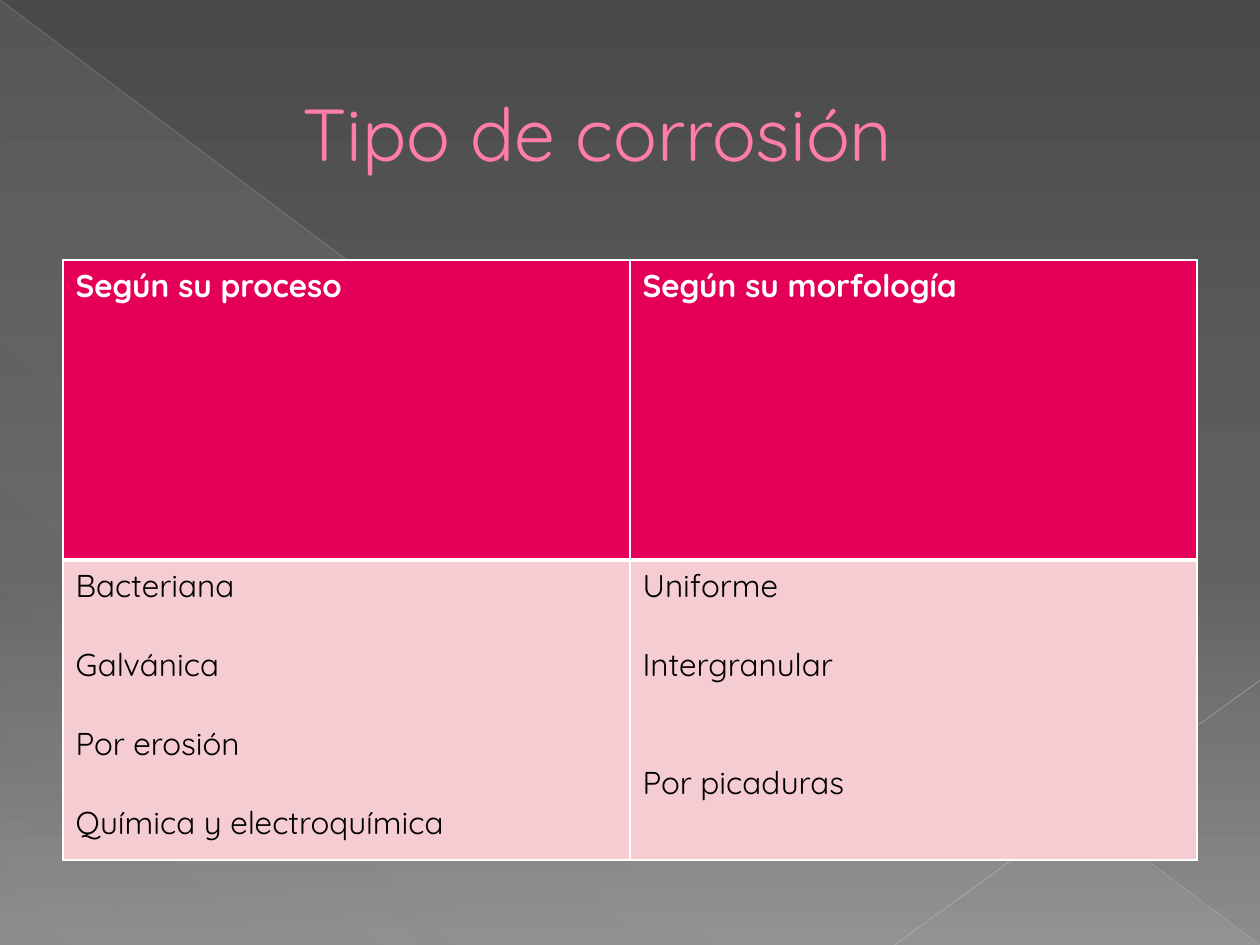
from pptx import Presentation
from pptx.dml.color import RGBColor
from pptx.enum.shapes import MSO_CONNECTOR as Connector, MSO_SHAPE as Shape
from pptx.enum.text import MSO_ANCHOR as Anchor, PP_ALIGN as Align
from pptx.oxml import parse_xml
from pptx.oxml.ns import nsdecls, qn
from pptx.util import Inches, Pt

WHITE = RGBColor(0xFF, 0xFF, 0xFF)
BLACK = RGBColor(0x00, 0x00, 0x00)
PINK = RGBColor(0xFF, 0x7D, 0xA7)
PLUM = RGBColor(0xB1, 0x27, 0x61)
CRIMSON = RGBColor(0xE4, 0x00, 0x59)
BLUSH = RGBColor(0xF5, 0xCC, 0xD1)
CHARCOAL = RGBColor(0x4A, 0x4A, 0x4A)
SLATE = RGBColor(0x62, 0x62, 0x62)
ASH = RGBColor(0x8C, 0x8C, 0x8C)
MIST = RGBColor(0xD2, 0xD2, 0xD2)
SILVER = RGBColor(0xBF, 0xBF, 0xBF)
PEARL = RGBColor(0xC6, 0xC6, 0xC6)

FONT = "Quicksand"
TITLE_FORMAT = {"name": FONT, "size": Pt(42), "bold": False}
HEADER_FORMAT = {"name": FONT, "size": Pt(18), "bold": True}
BODY_FORMAT = {"name": FONT, "size": Pt(18), "bold": False}
BLANK_LINE = 22.5

COLUMNS = [
    ("Según su proceso",
     [("Bacteriana", 0), ("Galvánica", 1), ("Por erosión", 1),
      ("Química y electroquímica", 1)]),
    ("Según su morfología",
     [("Uniforme", 0), ("Intergranular", 1), ("Por picaduras", 2)]),
]


def color_xml(color, opacity=100):
    return (f'<a:srgbClr val="{color}"><a:alpha val="{opacity * 1000}"/>'
            '</a:srgbClr>')


def line_xml(tag, color, points):
    return parse_xml(
        f'<a:{tag} {nsdecls("a")} w="{Pt(points)}"><a:solidFill>'
        f'{color_xml(color)}</a:solidFill></a:{tag}>')


class CorrosionSlide:
    def __init__(self, deck):
        self.width, self.height = deck.slide_width, deck.slide_height
        self.slide = deck.slides.add_slide(deck.slide_layouts[5])

    def point(self, x, y):
        return round(x * self.width), round(y * self.height)

    def box(self, left, top, width, height):
        return *self.point(left, top), *self.point(width, height)

    def style(self, run, color, format_values):
        for name, value in format_values.items():
            setattr(run.font, name, value)
        run.font.color.rgb = color

    def gradient(self, fill, owner, angle, stops):
        fill.gradient()
        old = next(owner.iter(qn("a:gradFill")))
        marks = "".join(
            f'<a:gs pos="{share * 1000}">{color_xml(color, opacity)}</a:gs>'
            for share, color, opacity in stops)
        old.getparent().replace(old, parse_xml(
            f'<a:gradFill {nsdecls("a")} rotWithShape="1"><a:gsLst>{marks}'
            f'</a:gsLst><a:lin ang="{angle * 60000}" scaled="0"/></a:gradFill>'))

    def background(self, angle, stops):
        self.gradient(self.slide.background.fill, self.slide.element, angle, stops)

    def triangle(self, area, angle, stops):
        corner = self.slide.shapes.add_shape(Shape.RIGHT_TRIANGLE, *self.box(*area))
        corner.shadow.inherit = False
        corner.line.fill.background()
        self.gradient(corner.fill, corner.element.spPr, angle, stops)

    def ray(self, start, end, color, points, opacity):
        ray = self.slide.shapes.add_connector(
            Connector.STRAIGHT, *self.point(*start), *self.point(*end))
        ray.line.width = Pt(points)
        ray.line.color.rgb = color
        properties = ray.element.spPr
        tint = next(properties.iter(qn("a:srgbClr")))
        tint.append(parse_xml(
            f'<a:alpha {nsdecls("a")} val="{opacity * 1000}"/>'))
        properties.append(parse_xml(f'<a:effectLst {nsdecls("a")}/>'))

    def title(self, text, area, indent):
        title = self.slide.shapes.title
        title.left, title.top, title.width, title.height = self.box(*area)
        title.element.getparent().append(title.element)
        title.text_frame.vertical_anchor = Anchor.MIDDLE
        paragraph = title.text_frame.paragraphs[0]
        paragraph.alignment = Align.LEFT
        layout = paragraph._p.get_or_add_pPr()
        layout.set("marL", str(round(indent * self.width)))
        layout.set("indent", "0")
        run = paragraph.add_run()
        run.text = text
        self.style(run, PINK, TITLE_FORMAT)
        run.font._element.insert(0, line_xml("ln", PLUM, 0.5))

    def cell(self, cell, entries, fill, color, format_values, borders):
        cell.fill.solid()
        cell.fill.fore_color.rgb = fill
        frame = cell.text_frame
        for index, (text, gaps) in enumerate(entries):
            paragraph = frame.add_paragraph() if index else frame.paragraphs[0]
            paragraph.space_before = Pt(gaps * BLANK_LINE)
            run = paragraph.add_run()
            run.text = text
            self.style(run, color, format_values)
        properties = cell._tc.get_or_add_tcPr()
        for index, (side, points) in enumerate(borders.items()):
            properties.insert(index, line_xml(side, WHITE, points))

    def table(self, columns, area):
        table = self.slide.shapes.add_table(
            2, len(columns), *self.box(*area)).table
        thin = {"lnL": 1, "lnR": 1, "lnT": 1, "lnB": 1}
        for index, (heading, kinds) in enumerate(columns):
            self.cell(table.cell(0, index), [(heading, 0)], CRIMSON, WHITE,
                      HEADER_FORMAT, {**thin, "lnB": 3})
            self.cell(table.cell(1, index), kinds, BLUSH, BLACK,
                      BODY_FORMAT, {**thin, "lnT": 3})


def main():
    deck = Presentation()
    deck.slide_width, deck.slide_height = Inches(10), Inches(7.5)
    page = CorrosionSlide(deck)
    page.background(90, [(0, CHARCOAL, 100), (60, SLATE, 100), (100, ASH, 100)])
    page.triangle((0, 0, 1, 1), 133, [(0, MIST, 10), (70, MIST, 8), (100, MIST, 1)])
    page.ray((0, 0), (1, 1), SILVER, 0.39, 35)
    page.ray((1, 0.72), (0.71, 1), PEARL, 0.47, 45)
    page.title("Tipo de corrosión", (0.05, 0.04, 0.9, 0.2), 0.18)
    page.table(COLUMNS, (0.05, 0.275, 0.9, 0.635))
    deck.save("out.pptx")


if __name__ == "__main__":
    main()
